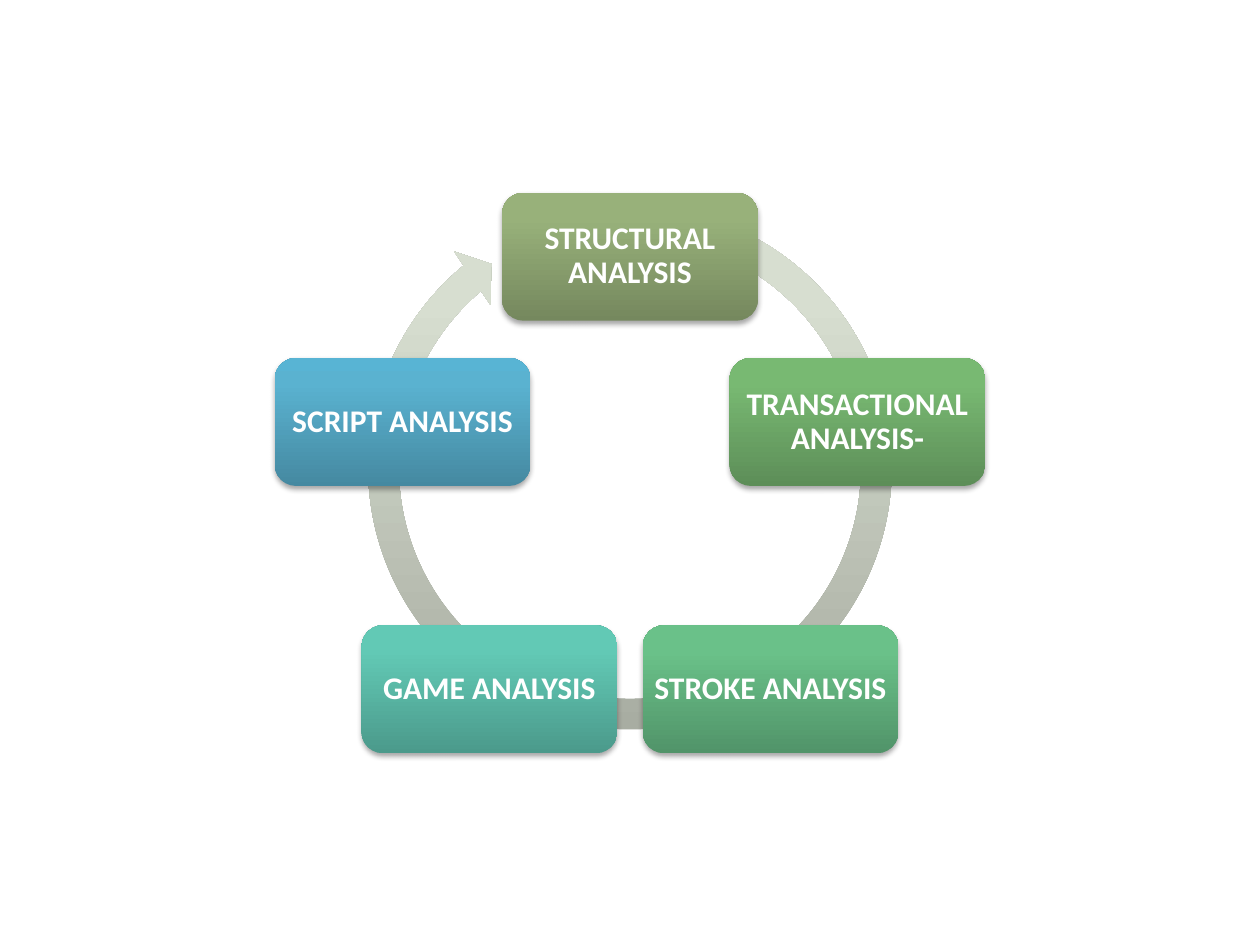
from copy import deepcopy
from dataclasses import dataclass
from math import cos, pi, sin

from lxml.etree import SubElement
from pptx import Presentation
from pptx.dml.color import RGBColor
from pptx.enum.shapes import MSO_SHAPE
from pptx.enum.text import MSO_ANCHOR, PP_ALIGN
from pptx.oxml.ns import qn
from pptx.util import Inches, Pt


@dataclass(frozen=True)
class Theme:
    font: str = "Calibri"
    size: int = 18
    ink: str = "FFFFFF"
    shade: str = "000000"
    ring: tuple = ("A6ABA0", "D7DED0", "D8DFD1")


THEME = Theme()
WIDE, HIGH = 10, 7.5
STEPS = [
    ("STRUCTURAL ANALYSIS", ("75885E", "98B17A", "99B379")),
    ("TRANSACTIONAL ANALYSIS-", ("5D8E58", "78B972", "78BB71")),
    ("STROKE ANALYSIS", ("519469", "6AC189", "69C389")),
    ("GAME ANALYSIS", ("4B9A8B", "62C9B5", "60CBB7")),
    ("SCRIPT ANALYSIS", ("4589A1", "5AB2D0", "58B4D4")),
]


def add_form(group, kind, box, tones):
    form = group.shapes.add_shape(kind, *(Inches(side) for side in box))
    form.line.fill.background()
    form.shadow.inherit = False
    form.fill.gradient()
    form.fill.gradient_angle = 90
    stops = form.element.spPr.find(".//" + qn("a:gsLst"))
    stops.append(deepcopy(stops[-1]))
    for stop, place, tone in zip(form.fill.gradient_stops, (0, 0.8, 1), tones):
        stop.position = place
        stop.color.rgb = RGBColor.from_string(tone)
    return form


def add_shade(form):
    effect = form.element.spPr.find(qn("a:effectLst"))
    cast = SubElement(effect, qn("a:outerShdw"), blurRad=str(Pt(3.1)),
                      dist=str(Pt(1.8)), dir="5400000", rotWithShape="0")
    tone = SubElement(cast, qn("a:srgbClr"), val=THEME.shade)
    SubElement(tone, qn("a:alpha"), val="35000")


def put_text(form, text, size=THEME.size, ink=THEME.ink, bold=True, inset=0.02):
    frame = form.text_frame
    frame.word_wrap = True
    frame.vertical_anchor = MSO_ANCHOR.MIDDLE
    frame.margin_left = frame.margin_right = Inches(inset)
    frame.margin_top = frame.margin_bottom = Inches(inset)
    line = frame.paragraphs[0]
    line.text = text
    line.alignment = PP_ALIGN.CENTER
    line.line_spacing = 0.9
    font = line.runs[0].font
    font.name, font.size, font.bold = THEME.font, Pt(size), bold
    font.color.rgb = RGBColor.from_string(ink)


def draw_ring(group, box):
    ring = add_form(group, MSO_SHAPE.CIRCULAR_ARROW, box, THEME.ring)
    for spot, value in enumerate((0.055, 3.307, 138.152, 173.621, 0.058)):
        ring.adjustments[spot] = value


def draw_cycle(slide, box):
    left, top, width, height = box
    group = slide.shapes.add_group_shape()
    draw_ring(group, (left + (width - height) / 2, top - 0.03, height, height))
    wide, high = 0.36 * width, 0.18 * width
    reach = (width - wide) / 2 / sin(2 * pi / len(STEPS))
    mid_x, mid_y = left + width / 2, top + high / 2 + reach
    for turn, (text, tones) in enumerate(STEPS):
        angle = 2 * pi * turn / len(STEPS)
        x = mid_x + reach * sin(angle) - wide / 2
        y = mid_y - reach * cos(angle) - high / 2
        card = add_form(group, MSO_SHAPE.ROUNDED_RECTANGLE, (x, y, wide, high), tones)
        add_shade(card)
        put_text(card, text)


def main():
    deck = Presentation()
    deck.slide_width, deck.slide_height = Inches(WIDE), Inches(HIGH)
    slide = deck.slides.add_slide(deck.slide_layouts[6])
    draw_cycle(slide, (0.22 * WIDE - 0.02, 0.2 * HIGH + 0.03, 0.56 * WIDE + 0.04, 0.59 * HIGH))
    deck.save("out.pptx")


if __name__ == "__main__":
    main()
